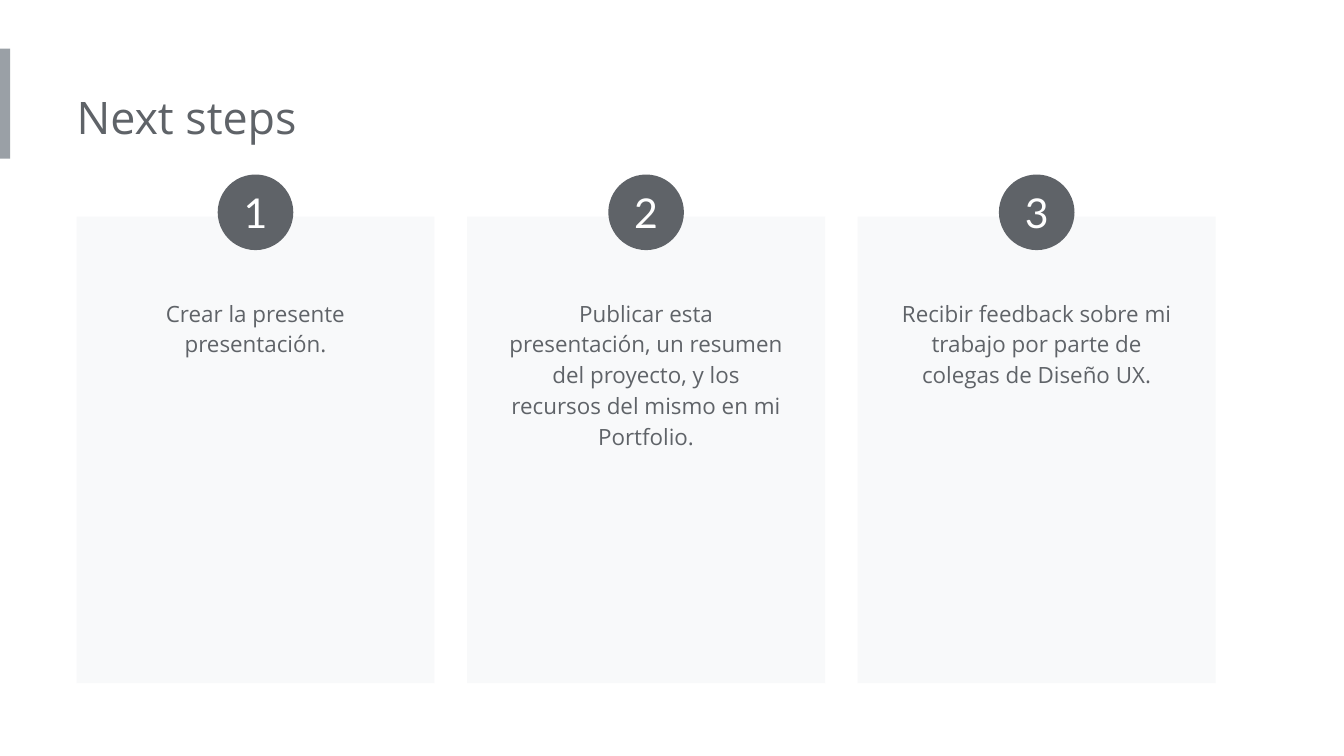
import dataclasses

import pptx
import pptx.dml.color
import pptx.enum.shapes
import pptx.enum.text
import pptx.util

Pt = pptx.util.Pt
Shape = pptx.enum.shapes.MSO_SHAPE
Align = pptx.enum.text.PP_ALIGN
Anchor = pptx.enum.text.MSO_ANCHOR


@dataclasses.dataclass(frozen=True)
class Theme:
    accent: str = "9AA0A6"
    dark: str = "5F6368"
    card: str = "F8F9FA"
    white: str = "FFFFFF"
    text_font: str = "Open Sans"
    number_font: str = "Lato"
    title_size: float = 24
    body_size: float = 12
    number_size: float = 22


class SlideBuilder:
    """Hold the theme and current page, and add each kind of element to it."""

    def __init__(self, page, theme):
        self.page = page
        self.theme = theme

    def apply(self, target, values):
        for name, value in values.items():
            setattr(target, name, value)

    def fill_text(self, box, text, font, size, color, insets, anchor, align, spacing=1.0):
        frame = box.text_frame
        left, top, right, bottom = map(Pt, insets)
        self.apply(frame, {
            "word_wrap": True,
            "auto_size": pptx.enum.text.MSO_AUTO_SIZE.NONE,
            "vertical_anchor": anchor,
            "margin_left": left,
            "margin_top": top,
            "margin_right": right,
            "margin_bottom": bottom,
        })
        para = frame.paragraphs[0]
        self.apply(para, {"alignment": align, "line_spacing": spacing})
        span = para.add_run()
        span.text = text
        self.apply(span.font, {"name": font, "size": Pt(size)})
        span.font.color.rgb = pptx.dml.color.RGBColor.from_string(color)

    def title(self, text, left, top, width, height):
        box = self.page.shapes.title
        self.apply(box, {"left": Pt(left), "top": Pt(top),
                         "width": Pt(width), "height": Pt(height)})
        self.fill_text(box, text, self.theme.text_font, self.theme.title_size,
                       self.theme.dark, (0, 7.2, 7.2, 7.2), Anchor.TOP, Align.LEFT)

    def shape(self, kind, left, top, width, height, color):
        shape = self.page.shapes.add_shape(kind, Pt(left), Pt(top), Pt(width), Pt(height))
        shape.shadow.inherit = False
        shape.fill.solid()
        shape.fill.fore_color.rgb = pptx.dml.color.RGBColor.from_string(color)
        shape.line.fill.background()
        return shape

    def body(self, text, left, top, width, height):
        box = self.page.shapes.add_textbox(Pt(left), Pt(top), Pt(width), Pt(height))
        self.fill_text(box, text, self.theme.text_font, self.theme.body_size,
                       self.theme.dark, (7.2,) * 4, Anchor.TOP, Align.CENTER, 1.15)

    def badge(self, number, center, top, size):
        circle = self.shape(Shape.OVAL, center - size / 2, top, size, size, self.theme.dark)
        self.fill_text(circle, str(number), self.theme.number_font, self.theme.number_size,
                       self.theme.white, (0,) * 4, Anchor.MIDDLE, Align.CENTER)


def main():
    deck = pptx.Presentation()
    deck.slide_width, deck.slide_height = Pt(720), Pt(405)
    page = deck.slides.add_slide(deck.slide_layouts[5])
    builder = SlideBuilder(page, Theme())

    builder.shape(Shape.RECTANGLE, 0, 26, 5.5, 59, builder.theme.accent)
    builder.title("Next steps", 41, 41, 388, 43)

    steps = [
        ("Crear la presente presentación.", 47.5),
        ("Publicar esta presentación, un resumen del proyecto, "
         "y los recursos del mismo en mi Portfolio.", 80.5),
        ("Recibir feedback sobre mi trabajo por parte de colegas de Diseño UX.", 64),
    ]
    first_left, card_width, gap, padding = 41, 191.75, 17.5, 15.25
    for index, (text, text_height) in enumerate(steps):
        left = first_left + index * (card_width + gap)
        builder.shape(Shape.RECTANGLE, left, 116, card_width, 250, builder.theme.card)
        builder.body(text, left + padding, 151.2, card_width - 2 * padding, text_height)
        builder.badge(index + 1, left + card_width / 2, 93.5, 40.5)

    deck.save("out.pptx")


if __name__ == "__main__":
    main()
